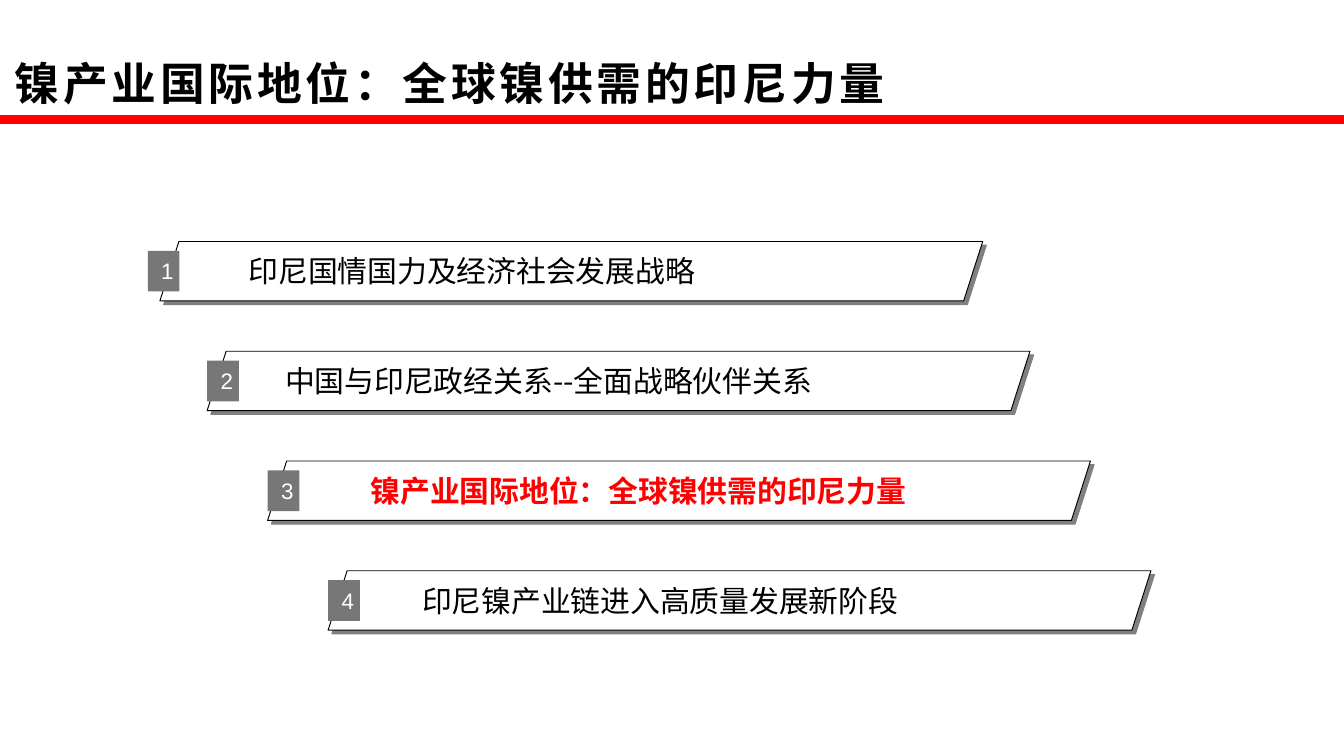
from lxml import etree
from pptx import Presentation
from pptx.dml.color import RGBColor
from pptx.enum.shapes import MSO_CONNECTOR, MSO_SHAPE
from pptx.enum.text import MSO_ANCHOR, PP_ALIGN
from pptx.oxml.ns import qn
from pptx.util import Pt

BLACK = RGBColor(0, 0, 0)
WHITE = RGBColor(255, 255, 255)
RED = RGBColor(255, 0, 0)
GRAY = RGBColor(0x77, 0x77, 0x77)
SHADOW_GRAY = RGBColor(0x80, 0x80, 0x80)
CJK_FONT = "Noto Sans CJK SC"
TOPIC = "镍产业国际地位：全球镍供需的印尼力量"

presentation = Presentation()
presentation.slide_width = Pt(720)
presentation.slide_height = Pt(405)
slide = presentation.slides.add_slide(presentation.slide_layouts[6])


def add_text(text, left, top, width, height, font_format, margins=(0, 0, 0, 0), wrap=True):
    box = slide.shapes.add_textbox(Pt(left), Pt(top), Pt(width), Pt(height))
    frame = box.text_frame
    frame.word_wrap = wrap
    frame.vertical_anchor = MSO_ANCHOR.MIDDLE
    for side, margin in zip(("left", "top", "right", "bottom"), margins):
        setattr(frame, f"margin_{side}", Pt(margin))
    paragraph = frame.paragraphs[0]
    run = paragraph.add_run()
    run.text = text
    color = font_format["color"]
    run.font.color.rgb = color
    for name, value in font_format.items():
        if name != "color":
            setattr(run.font, name, value)
    east_asian = etree.SubElement(run.font._element, qn("a:ea"))
    east_asian.set("typeface", font_format["name"])
    return paragraph, run


def add_panel(preset, left, top, width, height, fill):
    shape = slide.shapes.add_shape(preset, Pt(left), Pt(top), Pt(width), Pt(height))
    shape.shadow.inherit = False
    shape.fill.solid()
    shape.fill.fore_color.rgb = fill
    shape.line.fill.background()
    return shape


# Red rule under the title
rule = slide.shapes.add_connector(MSO_CONNECTOR.STRAIGHT, Pt(0), Pt(64), Pt(720), Pt(64))
rule.line.color.rgb = RED
rule.line.width = Pt(5)
etree.SubElement(rule._element.spPr, qn("a:effectLst"))

# Title with wide letter spacing
title_format = {"name": CJK_FONT, "size": Pt(24), "bold": True, "color": BLACK}
paragraph, run = add_text(TOPIC, 0, 25.2, 720, 38.2, title_format, (7.9, 2.9, 5.8, 2.9))
run.font._element.set("spc", "200")

# Agenda: text, bar left, badge left, text left
agenda = [
    ("印尼国情国力及经济社会发展战略", 85.7, 79.2, 133.2),
    ("中国与印尼政经关系--全面战略伙伴关系", 111, 111, 152.8),
    (TOPIC, 143.4, 143.4, 198.5),
    ("印尼镍产业链进入高质量发展新阶段", 175.8, 175.8, 226.2),
]
number_format = {"name": "Arial", "size": Pt(12), "color": WHITE}

for index, (text, bar_left, badge_left, text_left) in enumerate(agenda):
    top = 129.4 + index * 58.8
    current = text == TOPIC

    # Slanted bar with a hard shadow
    bar = add_panel(MSO_SHAPE.PARALLELOGRAM, bar_left, top, 440.8, 31.8, WHITE)
    bar.adjustments[0] = 0.32
    bar.line.color.rgb = BLACK
    bar.line.width = Pt(0.5)
    effects = bar._element.spPr.find(qn("a:effectLst"))
    shadow = etree.SubElement(effects, qn("a:outerShdw"), dist=str(Pt(2.8)),
                              dir="2700000", algn="ctr", rotWithShape="0")
    etree.SubElement(shadow, qn("a:srgbClr"), val=str(SHADOW_GRAY))

    # Number badge
    add_panel(MSO_SHAPE.RECTANGLE, badge_left, top + 5, 17, 21.8, GRAY)
    paragraph, run = add_text(str(index + 1), badge_left + 7.2, top + 9, 6, 14,
                              number_format, wrap=False)
    paragraph.alignment = PP_ALIGN.CENTER
    paragraph.line_spacing = Pt(14)

    # Agenda text, the current topic in bold red
    item_format = {"name": CJK_FONT, "size": Pt(16), "bold": current,
                   "color": RED if current else BLACK}
    add_text(text, text_left, top + 6, 390, 19.4, item_format)

presentation.save("out.pptx")
